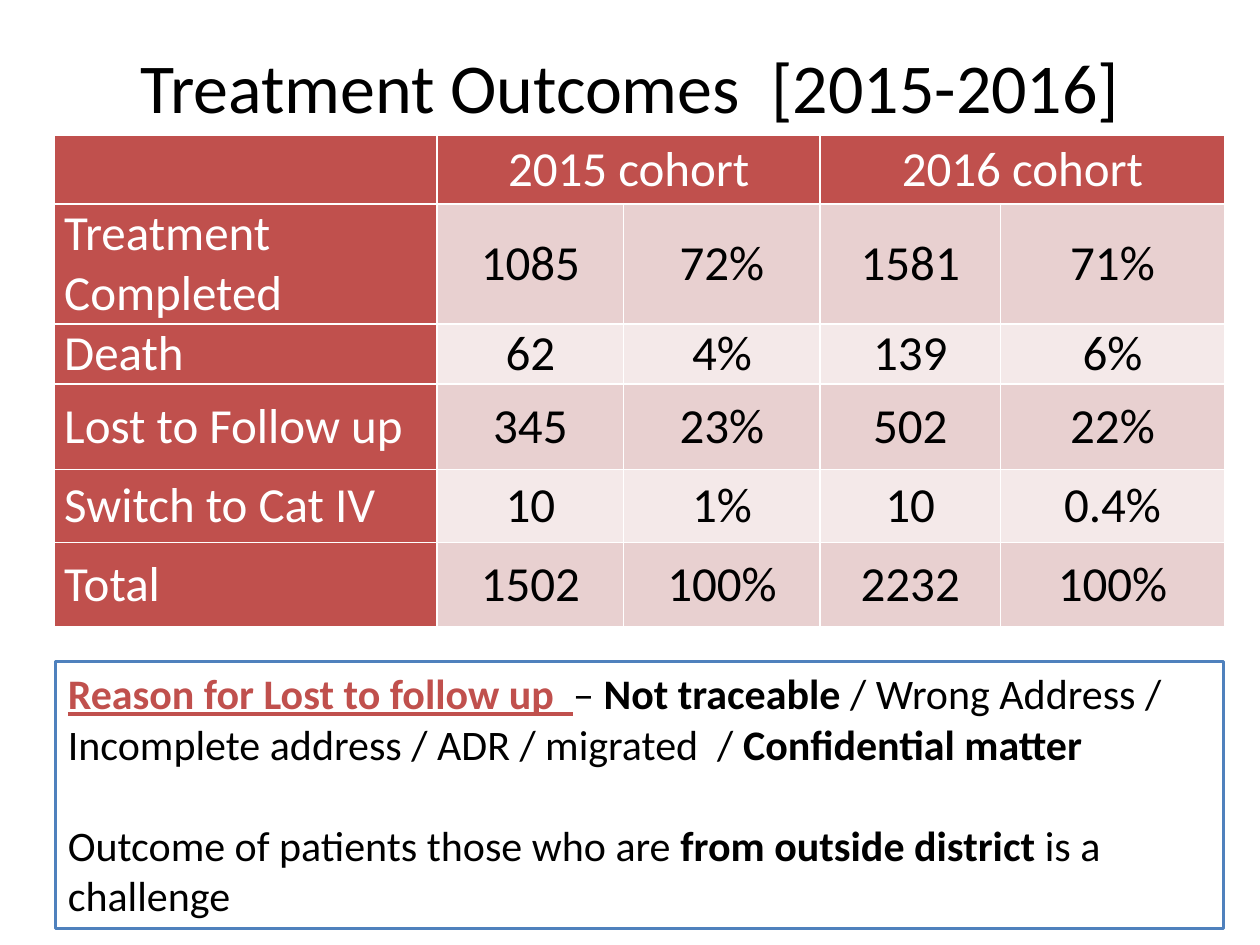
import pptx
import pptx.util
import pptx.dml.color
import pptx.enum.shapes
import pptx.enum.text

Inches, Pt = pptx.util.Inches, pptx.util.Pt
ALIGN = pptx.enum.text.PP_ALIGN
MIDDLE = pptx.enum.text.MSO_ANCHOR.MIDDLE

RED, BLUE, WHITE, BLACK = "C0504D", "4F81BD", "FFFFFF", "000000"
BANDS = ("E8D0D0", "F4E9E9")

TITLE = "Treatment Outcomes  [2015-2016]"
COHORTS = ("2015 cohort", "2016 cohort")
OUTCOMES = [
    ("Treatment Completed", "1085", "72%", "1581", "71%"),
    ("Death", "62", "4%", "139", "6%"),
    ("Lost to Follow up", "345", "23%", "502", "22%"),
    ("Switch to Cat IV", "10", "1%", "10", "0.4%"),
    ("Total", "1502", "100%", "2232", "100%"),
]
COLUMN_WIDTHS = (3.04, 1.48, 1.56, 1.43, 1.78)
ROW_HEIGHTS = (0.55, 0.85, 0.42, 0.68, 0.58, 0.67)

HEADING = {"bold": True, "underline": True, "color": RED}
STRONG = {"bold": True}
REASONS = [
    [
        ("Reason for Lost to follow up  ", HEADING),
        ("– ", {}),
        ("Not traceable ", STRONG),
        ("/ Wrong Address / Incomplete address / ADR / migrated  / ", {}),
        ("Confidential matter", STRONG),
    ],
    [
        ("Outcome of patients those who are ", {}),
        ("from outside district ", STRONG),
        ("is a challenge", {}),
    ],
]


def rgb(value):
    return pptx.dml.color.RGBColor.from_string(value)


def write(paragraph, text, size=24, color=BLACK, bold=False, underline=False, align=ALIGN.LEFT):
    paragraph.alignment = align
    run = paragraph.add_run()
    run.text = text
    font = run.font
    font.name, font.size = "Calibri", Pt(size)
    font.bold, font.underline = bold, underline
    font.color.rgb = rgb(color)


def fill_cell(cell, text, fill, color, align=ALIGN.CENTER, side_margin=0.08):
    cell.fill.solid()
    cell.fill.fore_color.rgb = rgb(fill)
    cell.vertical_anchor = MIDDLE
    cell.margin_left = cell.margin_right = Inches(side_margin)
    cell.margin_top = cell.margin_bottom = 0
    write(cell.text_frame.paragraphs[0], text, size=28, color=color, align=align)


def add_title(slide):
    title = slide.shapes.title
    title.left, title.top = Inches(0.5), Inches(0.05)
    title.width, title.height = Inches(9), Inches(1.25)
    title.text_frame.vertical_anchor = MIDDLE
    write(title.text_frame.paragraphs[0], TITLE, size=40, align=ALIGN.CENTER)


def add_outcomes(slide):
    table = slide.shapes.add_table(
        len(ROW_HEIGHTS), len(COLUMN_WIDTHS), Inches(0.43), Inches(1.07),
        Inches(sum(COLUMN_WIDTHS)), Inches(sum(ROW_HEIGHTS))).table
    table.first_col = True
    for column, width in zip(table.columns, COLUMN_WIDTHS):
        column.width = Inches(width)
    for row, height in zip(table.rows, ROW_HEIGHTS):
        row.height = Inches(height)

    fill_cell(table.cell(0, 0), "", RED, WHITE)
    for index, cohort in enumerate(COHORTS):
        first = 1 + 2 * index
        table.cell(0, first).merge(table.cell(0, first + 1))
        fill_cell(table.cell(0, first), cohort, RED, WHITE)

    for row, (label, *values) in enumerate(OUTCOMES, start=1):
        fill_cell(table.cell(row, 0), label, RED, WHITE, align=ALIGN.LEFT)
        for column, value in enumerate(values, start=1):
            fill_cell(table.cell(row, column), value, BANDS[(row - 1) % 2], BLACK,
                      side_margin=0.08 if column < 3 else 0.01)


def add_reasons(slide):
    box = slide.shapes.add_shape(
        pptx.enum.shapes.MSO_SHAPE.RECTANGLE,
        Inches(0.44), Inches(5.25), Inches(9.27), Inches(2.12))
    box.shadow.inherit = False
    box.fill.solid()
    box.fill.fore_color.rgb = rgb(WHITE)
    box.line.color.rgb = rgb(BLUE)
    box.line.width = Pt(2)
    frame = box.text_frame
    frame.word_wrap = True
    frame.vertical_anchor = pptx.enum.text.MSO_ANCHOR.TOP
    for index, parts in enumerate(REASONS):
        paragraph = frame.add_paragraph() if index else frame.paragraphs[0]
        paragraph.space_before = Pt(29 * index)
        for text, style in parts:
            write(paragraph, text, **style)


def main():
    presentation = pptx.Presentation()
    presentation.slide_width, presentation.slide_height = Inches(10), Inches(7.5)
    slide = presentation.slides.add_slide(presentation.slide_layouts.get_by_name("Title Only"))
    add_title(slide)
    add_outcomes(slide)
    add_reasons(slide)
    presentation.save("out.pptx")


if __name__ == "__main__":
    main()
